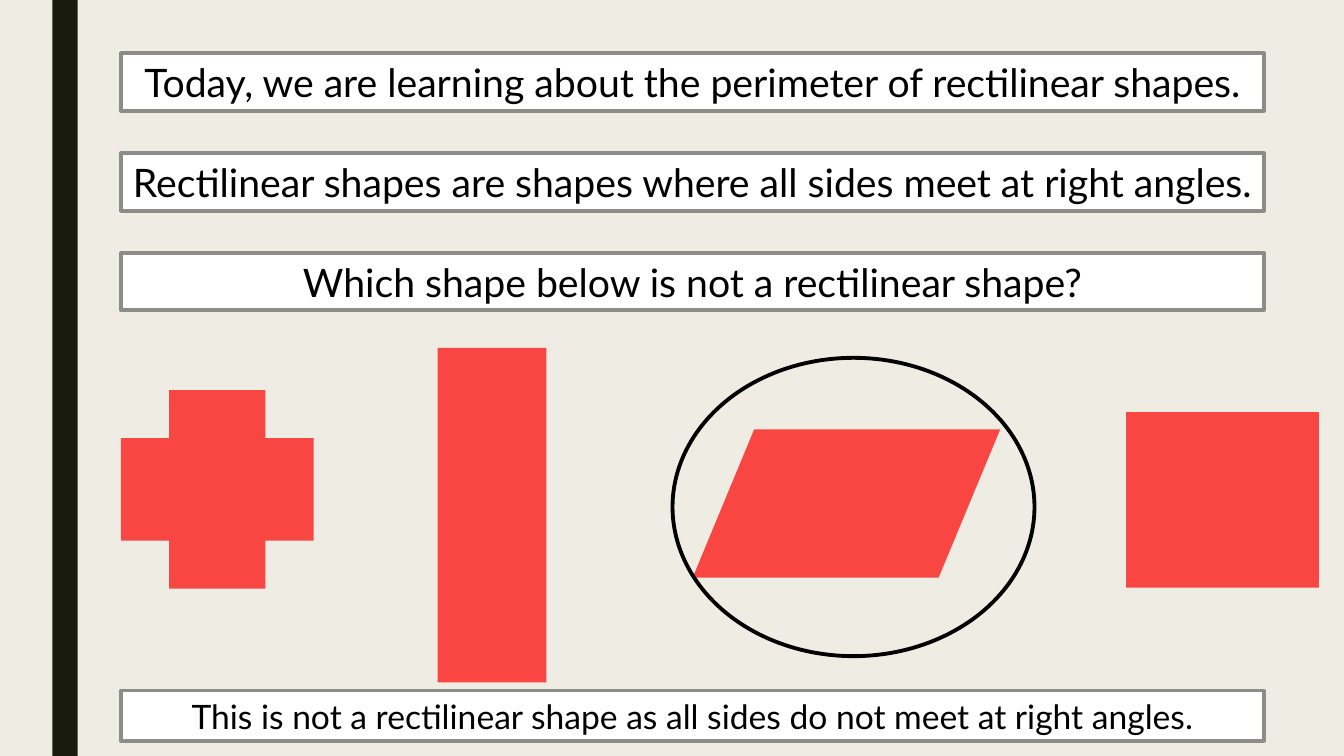
from lxml import etree
from pptx import Presentation
from pptx.dml.color import RGBColor
from pptx.enum.shapes import MSO_SHAPE
from pptx.enum.text import MSO_ANCHOR, MSO_AUTO_SIZE, PP_ALIGN
from pptx.oxml.ns import qn
from pptx.util import Inches, Pt

RECT, OVAL = MSO_SHAPE.RECTANGLE, MSO_SHAPE.OVAL
CROSS, PARALLELOGRAM = MSO_SHAPE.CROSS, MSO_SHAPE.FLOWCHART_DATA
CENTER, TOP = PP_ALIGN.CENTER, MSO_ANCHOR.TOP
GROW = MSO_AUTO_SIZE.SHAPE_TO_FIT_TEXT

STATEMENTS = [
    "Today, we are learning about the perimeter of rectilinear shapes.",
    "Rectilinear shapes are shapes where all sides meet at right angles.",
    "Which shape below is not a rectilinear shape?",
]
ANSWER = "This is not a rectilinear shape as all sides do not meet at right angles."

COLORS = {"background": "EFEDE3", "sidebar": "191B0E", "panel": "FFFFFF",
          "border": "8C8D86", "figure": "FF0000", "ink": "000000"}
FONT = "Lato"
LINE_WIDTH = Pt(2.75)
FIGURE_OPACITY = 70

ROWS = 90
SLIDE_W, SLIDE_H = Inches(13.33), Inches(7.5)
CELL = SLIDE_H / ROWS

SIDEBAR = (6.24, 0, 3, ROWS)
PANEL_LEFT, PANEL_WIDTH = 14.4, 136
STATEMENT_TOP, STATEMENT_STEP, STATEMENT_HEIGHT = 6.36, 11.88, 6.84
ANSWER_TOP, ANSWER_HEIGHT = 82.2, 6
FIGURES = [
    (CROSS, (PANEL_LEFT, 46.44, 22.92, 23.64)),
    (RECT, (52.08, 41.4, 12.96, 39.84)),
    (RECT, (134.04, 49.08, 22.92, 20.88)),
    (PARALLELOGRAM, (82.44, 51.12, 36.6, 17.64)),
]
RING = (80.04, 42.6, 43.08, 35.52)


def rgb(name):
    return RGBColor.from_string(COLORS[name])


def add_shape(s, kind, box, fill=None, line=None, opacity=100):
    sp = s.shapes.add_shape(kind, *(round(n * CELL) for n in box))
    sp.shadow.inherit = False
    if fill:
        sp.fill.solid()
        sp.fill.fore_color.rgb = rgb(fill)
    else:
        sp.fill.background()
    if line:
        sp.line.color.rgb = rgb(line)
        sp.line.width = LINE_WIDTH
    else:
        sp.line.fill.background()
    if opacity < 100:
        color = sp.fill._xPr.find(qn("a:solidFill"))[0]
        etree.SubElement(color, qn("a:alpha"), val=str(opacity * 1000))
    return sp


def add_panel(s, text, top, height, size):
    box = (PANEL_LEFT, top, PANEL_WIDTH, height)
    tf = add_shape(s, RECT, box, "panel", "border").text_frame
    frame = {"word_wrap": True, "auto_size": GROW, "vertical_anchor": TOP}
    for name, value in frame.items():
        setattr(tf, name, value)
    p = tf.paragraphs[0]
    p.alignment = CENTER
    r = p.add_run()
    r.text = text
    for name, value in {"name": FONT, "size": Pt(size)}.items():
        setattr(r.font, name, value)
    r.font.color.rgb = rgb("ink")


def main():
    prs = Presentation()
    prs.slide_width, prs.slide_height = SLIDE_W, SLIDE_H
    s = prs.slides.add_slide(prs.slide_layouts[6])
    s.background.fill.solid()
    s.background.fill.fore_color.rgb = rgb("background")

    add_shape(s, RECT, SIDEBAR, "sidebar")
    for i, text in enumerate(STATEMENTS):
        add_panel(s, text, STATEMENT_TOP + i * STATEMENT_STEP, STATEMENT_HEIGHT, 28)
    for kind, box in FIGURES:
        add_shape(s, kind, box, "figure", opacity=FIGURE_OPACITY)
    add_shape(s, OVAL, RING, line="ink")
    add_panel(s, ANSWER, ANSWER_TOP, ANSWER_HEIGHT, 24)

    prs.save("out.pptx")


if __name__ == "__main__":
    main()
